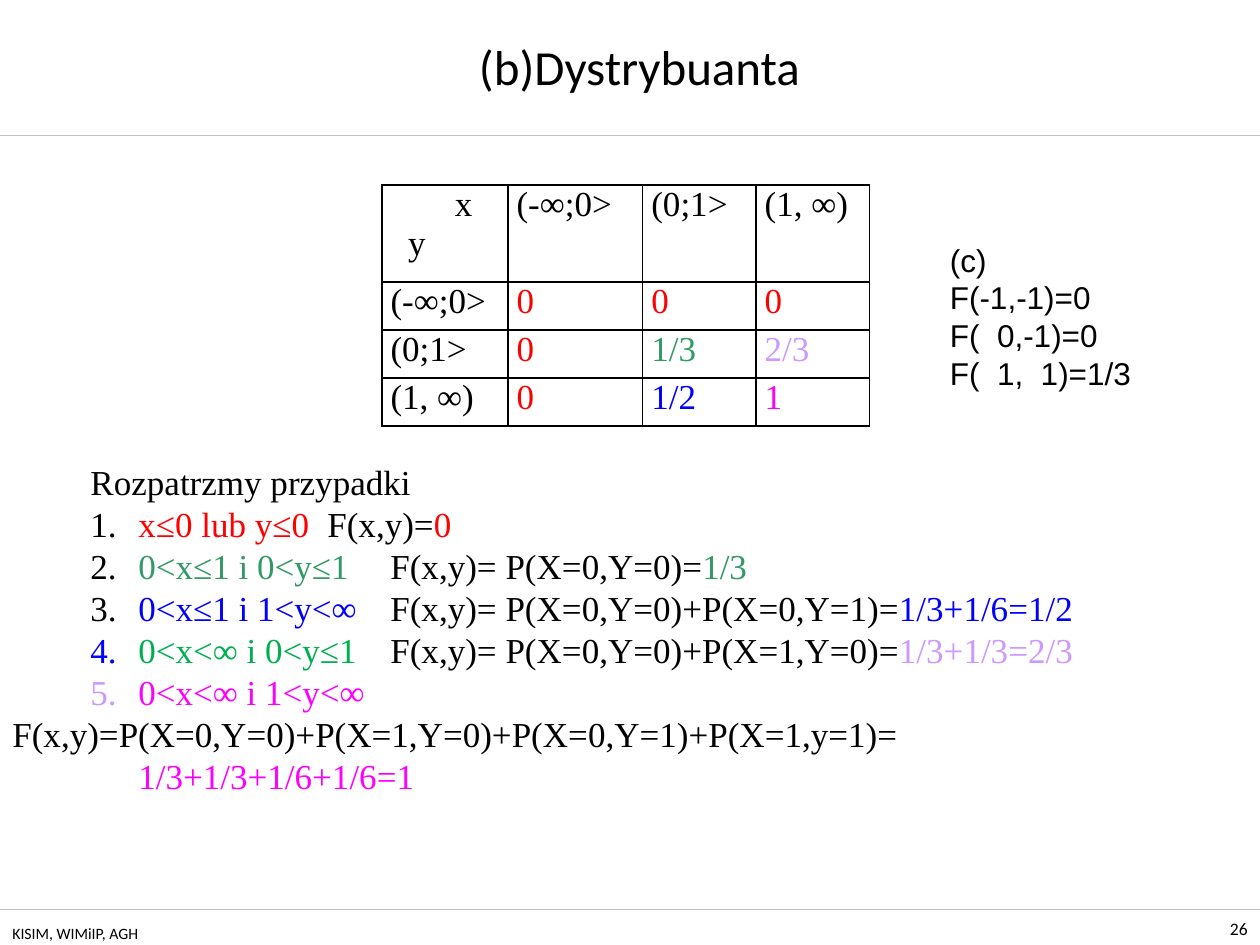
"""Build the slide on the joint distribution function."""
from lxml import etree
from pptx import Presentation
from pptx.dml.color import RGBColor
from pptx.enum import shapes, text
from pptx.oxml import ns
from pptx.util import Inches, Pt

BLACK, RED, SEA, GREEN = "000000", "FF0000", "339966", "00B050"
BLUE, LILAC, PINK, GREY = "0000FF", "CC99FF", "FF00FF", "C0C0C0"
SERIF, SANS, BODY = "Times New Roman", "Arial", "Calibri"
LEFT, CENTER, RIGHT = text.PP_ALIGN.LEFT, text.PP_ALIGN.CENTER, text.PP_ALIGN.RIGHT
TOP, MIDDLE, BOTTOM = text.MSO_ANCHOR.TOP, text.MSO_ANCHOR.MIDDLE, text.MSO_ANCHOR.BOTTOM

RULES = [1.07, 7.22]
LABELS = [
    ("26", (9.49, 7.22, 0.51, 0.28), BODY, 10, RIGHT, BOTTOM),
    ("(b)Dystrybuanta", (0.98, 0.21, 8.19, 0.63), BODY, 28, CENTER, MIDDLE),
    ("KISIM, WIMiIP, AGH", (0, 7.28, 3.17, 0.22), BODY, 9, LEFT, TOP),
    ("(c)\nF(-1,-1)=0\nF(  0,-1)=0\nF(  1,  1)=1/3", (7.44, 1.86, 1.95, 1.31), SANS, 18, LEFT, TOP),
]
RANGES = ["(-∞;0>", "(0;1>", "(1, ∞)"]
VALUES = [
    [("0", RED), ("0", RED), ("0", RED)],
    [("0", RED), ("1/3", SEA), ("2/3", LILAC)],
    [("0", RED), ("1/2", BLUE), ("1", PINK)],
]
TABLE_AT = (3.03, 1.47, 3.87, 1.92)
COLUMNS = [1, 1.07, 0.9, 0.9]
ROWS = [0.77, 0.38, 0.38, 0.38]
CORNER_INDENTS = [0.51, 0.14]
CASES_AT = (0, 3.57, 10, 2.84)
CASE_INDENT, CASE_TABS = 0.62, [1, 3]
CASES = [
    [("Rozpatrzmy przypadki", BLACK)],
    [("1.\t", BLACK), ("x≤0 lub y≤0\t", RED), ("F(x,y)=", BLACK), ("0", RED)],
    [("2.\t", BLACK), ("0<x≤1 i 0<y≤1\t", SEA), ("F(x,y)= P(X=0,Y=0)=", BLACK), ("1/3", SEA)],
    [("3.\t", BLACK), ("0<x≤1 i 1<y<∞\t", BLUE),
     ("F(x,y)= P(X=0,Y=0)+P(X=0,Y=1)=", BLACK), ("1/3+1/6=1/2", BLUE)],
    [("4.\t", BLUE), ("0<x<∞ i 0<y≤1\t", GREEN),
     ("F(x,y)= P(X=0,Y=0)+P(X=1,Y=0)=", BLACK), ("1/3+1/3=2/3", LILAC)],
    [("5.\t", LILAC), ("0<x<∞ i 1<y<∞\t", PINK),
     ("F(x,y)=P(X=0,Y=0)+P(X=1,Y=0)+P(X=0,Y=1)+P(X=1,y=1)=", BLACK)],
    [("\t1/3+1/3+1/6+1/6=1", PINK)],
]


def color(value):
    return RGBColor.from_string(value)


def sub(parent, tag, **attributes):
    return etree.SubElement(parent, ns.qn(tag), {key: str(value) for key, value in attributes.items()})


def style(span, face, size, shade=BLACK):
    span.font.name, span.font.size, span.font.bold = face, Pt(size), False
    span.font.color.rgb = color(shade)


def add_rule(page, y):
    rule = page.shapes.add_connector(shapes.MSO_CONNECTOR.STRAIGHT, 0, Inches(y), Inches(10), Inches(y))
    rule.line.color.rgb = color(GREY)
    rule.line.width = Pt(0.25)
    sub(rule.element.spPr, "a:effectLst")


def add_frame(page, at, anchor):
    frame = page.shapes.add_textbox(*map(Inches, at)).text_frame
    frame.word_wrap = True
    frame.vertical_anchor = anchor
    return frame


def add_label(page, words, at, face, size, align, anchor):
    frame = add_frame(page, at, anchor)
    frame.text = words
    for para in frame.paragraphs:
        para.alignment = align
        style(para.runs[0], face, size)


def add_cases(page):
    frame = add_frame(page, CASES_AT, MIDDLE)
    frame.text = "\n" * (len(CASES) - 1)
    for para, spans in zip(frame.paragraphs, CASES):
        properties = para._p.get_or_add_pPr()
        properties.set("marL", "0")
        properties.set("indent", str(Inches(CASE_INDENT)))
        tabs = sub(properties, "a:tabLst")
        for stop in CASE_TABS:
            sub(tabs, "a:tab", pos=Inches(stop), algn="l")
        for words, shade in spans:
            span = para.add_run()
            span.text = words
            style(span, SERIF, 20, shade)


def fill_cell(cell, words, shade):
    cell.margin_left = cell.margin_right = Inches(0.07)
    cell.margin_top = cell.margin_bottom = 0
    for side in ("a:lnL", "a:lnR", "a:lnT", "a:lnB"):
        border = sub(cell._tc.get_or_add_tcPr(), side, w=Pt(1))
        sub(sub(border, "a:solidFill"), "a:srgbClr", val=BLACK)
    cell.fill.background()
    cell.text_frame.text = words
    for para in cell.text_frame.paragraphs:
        para.alignment = text.PP_ALIGN.JUSTIFY
        style(para.runs[0], SERIF, 20, shade)


def add_distribution(page):
    table = page.shapes.add_table(len(ROWS), len(COLUMNS), *map(Inches, TABLE_AT)).table
    table.first_row = table.horz_banding = False
    for column, width in zip(table.columns, COLUMNS):
        column.width = Inches(width)
    for row, height in zip(table.rows, ROWS):
        row.height = Inches(height)
    header = [(words, BLACK) for words in ["x\ny"] + RANGES]
    body = [[(name, BLACK)] + values for name, values in zip(RANGES, VALUES)]
    for r, entries in enumerate([header] + body):
        for c, (words, shade) in enumerate(entries):
            fill_cell(table.cell(r, c), words, shade)
    for para, indent in zip(table.cell(0, 0).text_frame.paragraphs, CORNER_INDENTS):
        para._p.get_or_add_pPr().set("marL", str(Inches(indent)))


def main():
    deck = Presentation()
    deck.slide_width, deck.slide_height = Inches(10), Inches(7.5)
    page = deck.slides.add_slide(deck.slide_layouts[6])
    for y in RULES:
        add_rule(page, y)
    for label in LABELS:
        add_label(page, *label)
    add_distribution(page)
    add_cases(page)
    deck.save("out.pptx")


if __name__ == "__main__":
    main()
